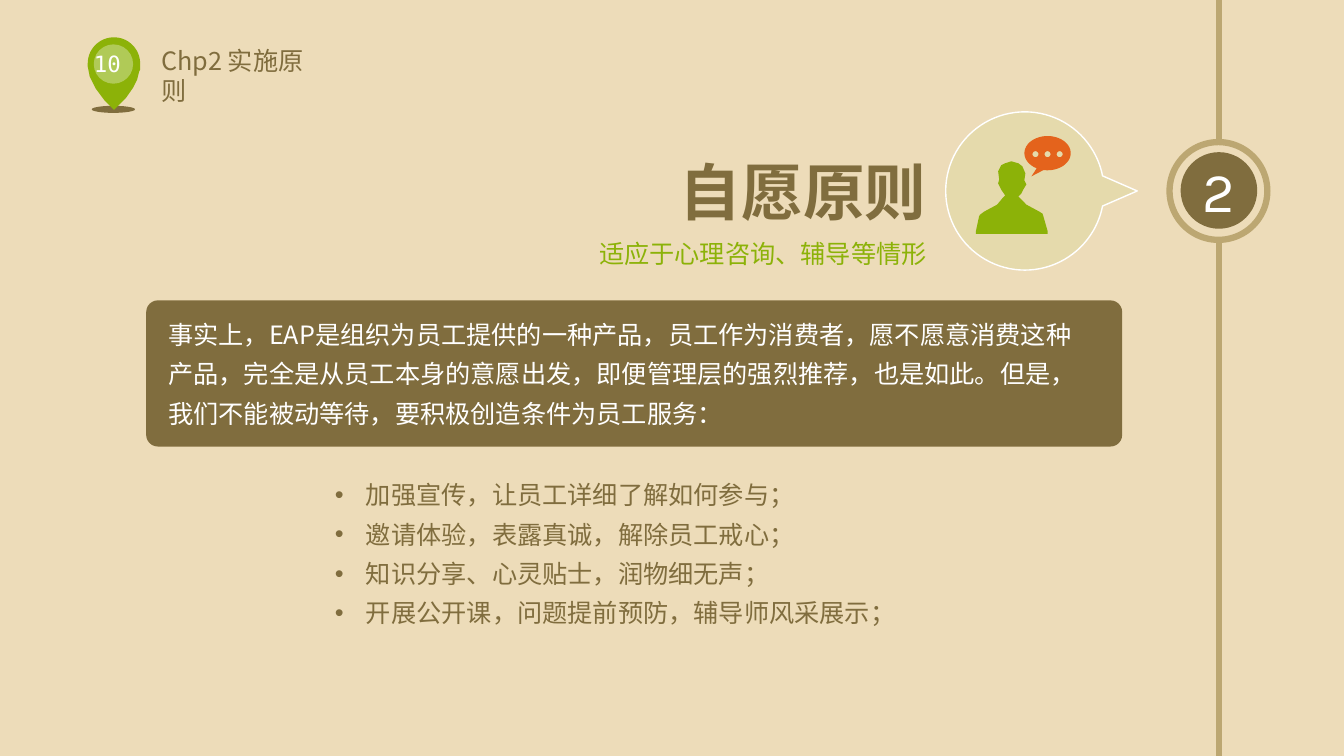
import math

from lxml import etree
from pptx import Presentation
from pptx.dml.color import RGBColor
from pptx.enum.shapes import MSO_CONNECTOR, MSO_SHAPE
from pptx.enum.text import MSO_ANCHOR, MSO_AUTO_SIZE, PP_ALIGN
from pptx.oxml.ns import qn
from pptx.util import Inches, Pt

LEFT, CENTER, RIGHT = PP_ALIGN.LEFT, PP_ALIGN.CENTER, PP_ALIGN.RIGHT
OVAL, ROUNDED, CALLOUT = (
    MSO_SHAPE.OVAL, MSO_SHAPE.ROUNDED_RECTANGLE, MSO_SHAPE.OVAL_CALLOUT)
COLORS = {"sand": "EDDCB9", "brown": "806D3E", "green": "8CB208", "tan": "BCA772",
          "lime": "9FCC3E", "orange": "E4631C", "white": "FFFFFF"}
CJK_FONT = "Noto Sans CJK SC"

INTRO = ("事实上，EAP是组织为员工提供的一种产品，员工作为消费者，愿不愿意消费这种产品，"
         "完全是从员工本身的意愿出发，即便管理层的强烈推荐，也是如此。但是，"
         "我们不能被动等待，要积极创造条件为员工服务：")
ACTIONS = ["加强宣传，让员工详细了解如何参与；", "邀请体验，表露真诚，解除员工戒心；",
           "知识分享、心灵贴士，润物细无声；", "开展公开课，问题提前预防，辅导师风采展示；"]

PIN_SIDES = [(1.39, 0.66), (1.39, 0.69), (1.38, 0.71), (1.36, 0.79), (1.32, 0.87),
             (1.25, 0.97), (1.13, 1.09), (1.04, 1), (0.95, 0.88), (0.89, 0.76),
             (0.87, 0.66)]
BUST = [(10.35, 2.15), (10.34, 2.12), (10.31, 2.1), (10.18, 2.03), (10.12, 1.97),
        (10.1, 1.95), (10.13, 1.92), (10.15, 1.88), (10.18, 1.83), (10.16, 1.79),
        (10.17, 1.72), (10.14, 1.65), (10.1, 1.62), (10.03, 1.6), (9.97, 1.62),
        (9.93, 1.64), (9.9, 1.7), (9.91, 1.78), (9.9, 1.82), (9.93, 1.88),
        (9.97, 1.94), (9.94, 1.97), (9.89, 2.03), (9.76, 2.1), (9.72, 2.13),
        (9.71, 2.15), (9.68, 2.29), (9.68, 2.32), (10.39, 2.32), (10.39, 2.29)]


def rgb(name):
    return RGBColor.from_string(COLORS[name])


def arc(center, radii, start, end, steps=40):
    """Points along an elliptical arc; degrees run clockwise from the right."""
    angles = [math.radians(start + (end - start) * i / steps) for i in range(steps + 1)]
    return [(center[0] + radii[0] * math.cos(angle),
             center[1] + radii[1] * math.sin(angle)) for angle in angles]


def paint(shape, fill, line=None, width=1, opacity=100):
    shape.shadow.inherit = False
    shape.fill.solid()
    shape.fill.fore_color.rgb = rgb(fill)
    if opacity < 100:
        color = shape.fill._xPr.find(".//" + qn("a:srgbClr"))
        etree.SubElement(color, qn("a:alpha")).set("val", str(opacity * 1000))
    if line:
        shape.line.color.rgb = rgb(line)
        shape.line.width = Pt(width)
    else:
        shape.line.fill.background()


def add_preset(page, kind, box, fill, **style):
    shape = page.shapes.add_shape(kind, *map(Inches, box))
    paint(shape, fill, **style)
    return shape


def add_outline(page, contours, fill):
    """One filled shape; contours after the first become holes."""
    first, *holes = [[(Inches(x), Inches(y)) for x, y in contour] for contour in contours]
    builder = page.shapes.build_freeform(*first[0])
    builder.add_line_segments(first[1:])
    for hole in holes:
        builder.move_to(*hole[0])
        builder.add_line_segments(hole[1:])
    paint(builder.convert_to_shape(), fill)


def format_text(shape, size, color, align=LEFT, font=CJK_FONT, bold=False, spacing=1):
    for para in shape.text_frame.paragraphs:
        para.alignment = align
        para.line_spacing = spacing
        para.space_before = Pt(0)
        for span in para.runs:
            span.font.size = Pt(size)
            span.font.bold = bold
            span.font.name = font
            span.font.color.rgb = rgb(color)
            latin = span.font._element.find(qn("a:latin"))
            east_asian = etree.Element(qn("a:ea"), typeface=font)
            latin.addnext(east_asian)


def add_text(page, text, box, size, color, **style):
    shape = page.shapes.add_textbox(*map(Inches, box))
    shape.text_frame.word_wrap = True
    shape.text_frame.text = text
    format_text(shape, size, color, **style)


def fill_placeholder(shape, text, box, size, color, **style):
    shape.left, shape.top, shape.width, shape.height = map(Inches, box)
    frame = shape.text_frame
    frame.text = text
    frame.word_wrap = True
    frame.auto_size = MSO_AUTO_SIZE.NONE
    frame.vertical_anchor = MSO_ANCHOR.TOP
    format_text(shape, size, color, **style)


def add_bullets(shape):
    for para in shape.text_frame.paragraphs:
        properties = para._p.get_or_add_pPr()
        properties.set("marL", str(Inches(0.31)))
        properties.set("indent", str(-Inches(0.31)))
        etree.SubElement(properties, qn("a:buFont")).set("typeface", "Arial")
        etree.SubElement(properties, qn("a:buChar")).set("char", "•")


def add_chapter_pin(page):
    add_preset(page, OVAL, (0.91, 1.05, 0.43, 0.07), "brown")
    add_outline(page, [arc((1.13, 0.63), (0.26, 0.26), 180, 360) + PIN_SIDES], "green")
    add_preset(page, OVAL, (0.93, 0.44, 0.39, 0.39), "white", opacity=32)
    add_text(page, "10", (0.71, 0.45, 0.71, 0.37), 16, "white",
             align=CENTER, font="DejaVu Sans Mono")
    add_text(page, "Chp2 实施原则", (1.5, 0.4, 1.85, 0.4), 18, "brown")


def add_timeline(page):
    line = page.shapes.add_connector(
        MSO_CONNECTOR.STRAIGHT, Inches(12.09), 0, Inches(12.09), Inches(7.5))
    line.line.color.rgb = rgb("tan")
    line.line.width = Pt(4.5)
    etree.SubElement(line._element.spPr, qn("a:effectLst"))
    add_preset(page, OVAL, (11.6, 1.41, 0.97, 0.97), "sand", line="tan", width=4.5)
    marker = add_preset(page, OVAL, (11.71, 1.51, 0.76, 0.76), "brown")
    frame = marker.text_frame
    frame.margin_left = frame.margin_right = frame.margin_top = frame.margin_bottom = 0
    frame.vertical_anchor = MSO_ANCHOR.MIDDLE
    frame.text = "2"
    format_text(marker, 40, "white", align=CENTER, font="Karla")


def add_speaker(page):
    callout = add_preset(page, CALLOUT, (9.38, 1.11, 1.57, 1.57), "lime",
                         line="white", opacity=10)
    callout.adjustments[0], callout.adjustments[1] = 0.71, 0
    add_outline(page, [BUST], "green")
    bubble = arc((10.39, 1.52), (0.23, 0.17), 118, 460) + [(10.23, 1.75)]
    dots = [arc((10.39 + offset, 1.53), (0.03, 0.03), 360, 0, 16)
            for offset in (-0.12, 0, 0.12)]
    add_outline(page, [bubble] + dots, "orange")


def main():
    deck = Presentation()
    deck.slide_width, deck.slide_height = Inches(13.33), Inches(7.5)
    page = deck.slides.add_slide(deck.slide_layouts[1])
    page.background.fill.solid()
    page.background.fill.fore_color.rgb = rgb("sand")

    title, actions = page.placeholders
    fill_placeholder(title, "自愿原则", (6.01, 1.48, 3.28, 0.84), 44, "brown",
                     align=RIGHT, bold=True)
    fill_placeholder(actions, "\n".join(ACTIONS), (3.22, 4.62, 8.38, 1.68), 18, "brown",
                     spacing=1.3)
    add_bullets(actions)

    add_chapter_pin(page)
    panel = add_preset(page, ROUNDED, (1.45, 2.98, 9.68, 1.45), "brown")
    panel.adjustments[0] = 0.08
    add_text(page, INTRO, (1.57, 3.03, 9.39, 1.28), 18, "white", spacing=1.3)
    add_text(page, "适应于心理咨询、辅导等情形", (5.71, 2.32, 3.58, 0.4), 18, "green",
             align=RIGHT)
    add_timeline(page)
    add_speaker(page)
    deck.save("out.pptx")


if __name__ == "__main__":
    main()
